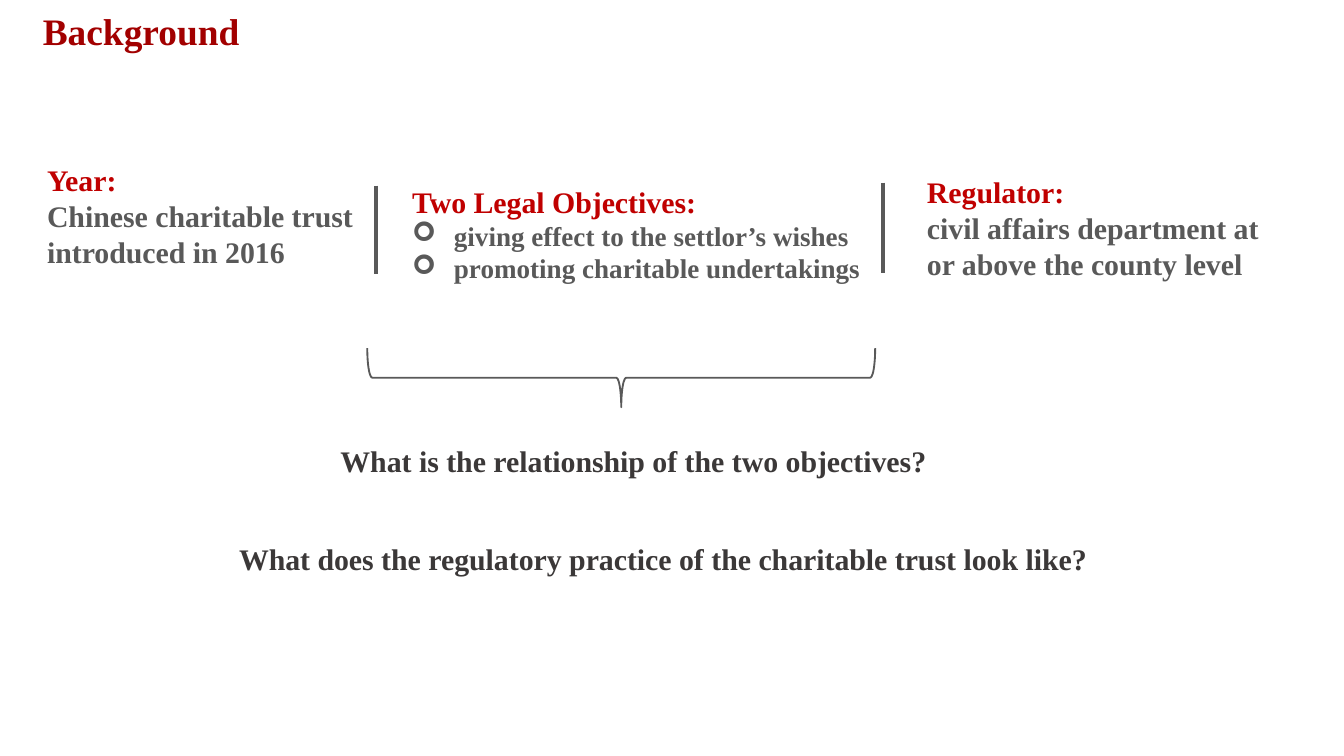
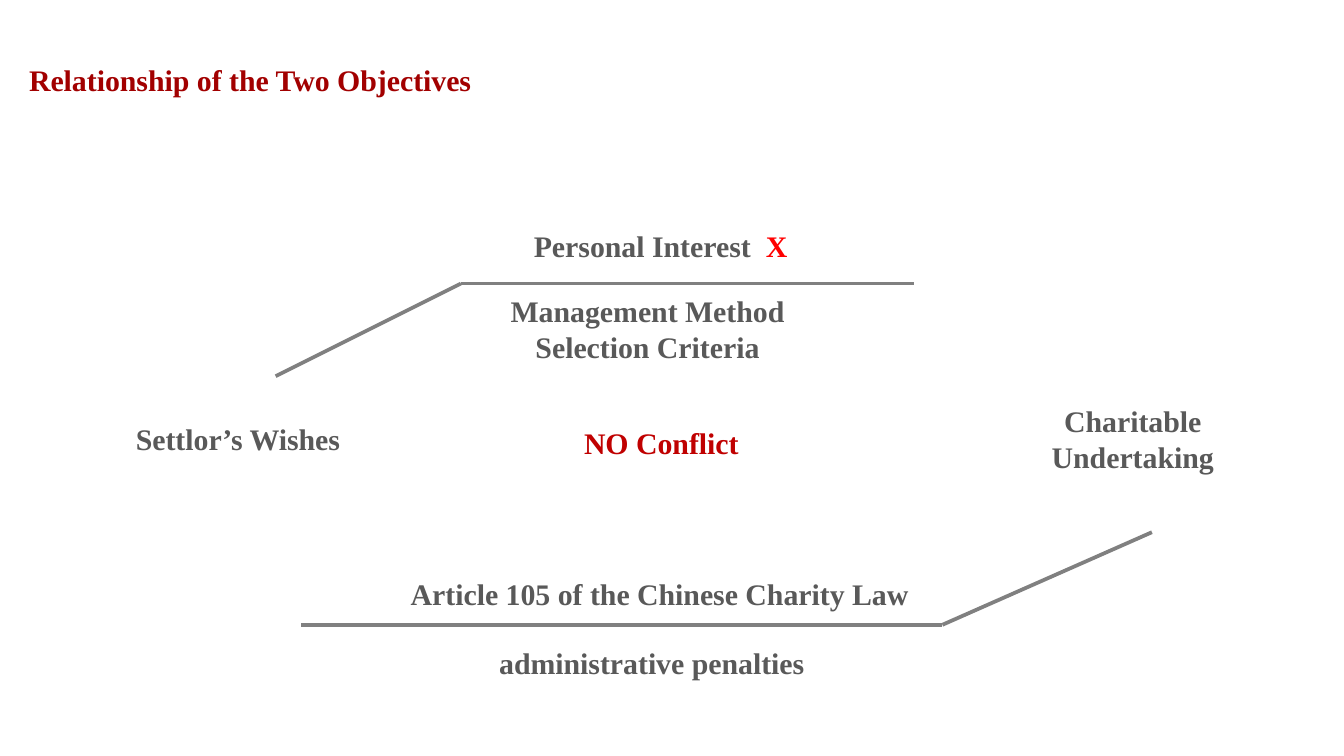
from lxml import etree
from pptx import Presentation
from pptx.dml.color import RGBColor
from pptx.enum.shapes import MSO_CONNECTOR, MSO_SHAPE
from pptx.enum.text import MSO_ANCHOR, MSO_AUTO_SIZE, PP_ALIGN
from pptx.oxml.ns import qn
from pptx.util import Cm, Pt

FONT = "Times New Roman"
TITLE, ACCENT, BODY, DARK = "A20000", "C00000", "595959", "3B3838"
RULE, CROSS = "808080", "FF0000"
BULLET = "➢"
INDENT = Cm(0.79)

# Content: boxes are (left, top, width, height) in cm
FACTS = [
    ((0.64, 2.92, 7.04, 2.31), "Year:",
     ["Chinese charitable trust introduced in 2016"], {}),
    ((7.54, 3.33, 9.3, 2.18), "Two Legal Objectives:",
     ["giving effect to the settlor’s wishes",
      "promoting charitable undertakings"], {"size": 14.5, "bullet": True}),
    ((17.27, 3.15, 7.04, 2.31), "Regulator:",
     ["civil affairs department at or above the county level"], {}),
]
DIVIDERS = [(7.11, 3.51, 5.18), (16.69, 3.45, 5.16)]  # x, top, bottom
BRACE = (11.18, 2.34, 1.12, 9.6)
QUESTIONS = [
    ((5.69, 8.23, 12.57, 0.94),
     "What is the relationship of the two objectives?"),
    ((4.14, 10.08, 16.79, 0.94),
     "What does the regulatory practice of the charitable trust look like?"),
]

SIDES = [
    ((1.7, 7.82, 5.74, 0.94), "Settlor’s Wishes ", BODY),
    ((18.59, 7.47, 5.64, 1.63), "Charitable Undertaking", BODY),
    ((9.53, 7.9, 5.94, 0.94), "NO Conflict", ACCENT),
]
LINE_LABELS = [
    ((9.73, 4.19, 5.51, 0.89), [[("Personal Interest  ", BODY), ("X", CROSS)]]),
    ((6.25, 5.77, 12.12, 0.89), ["Management Method ", "Selection Criteria "]),
    ((5.69, 10.77, 13.56, 0.89), ["Article 105 of the Chinese Charity Law"]),
    ((5.54, 12.07, 13.56, 0.89), ["administrative penalties"]),
]
# Each bent line: corner, then the two ends
BENT_LINES = [
    ((8.71, 5.36), [(17.27, 5.36), (5.21, 7.11)]),
    ((17.81, 11.81), [(5.69, 11.81), (21.77, 10.06)]),
]


def rgb(value):
    return RGBColor.from_string(value)


def add_box(s, box, grow=True):
    """Add an empty, vertically centred text box."""
    tf = s.shapes.add_textbox(*map(Cm, box)).text_frame
    tf.word_wrap = True
    tf.vertical_anchor = MSO_ANCHOR.MIDDLE
    if grow:
        tf.auto_size = MSO_AUTO_SIZE.SHAPE_TO_FIT_TEXT
    return tf


def add_text(tf, text, size=16, color=BODY, align=PP_ALIGN.LEFT,
             bullet=False, spacing=None):
    """Add a paragraph; text is a string or a list of (text, colour) runs."""
    p = tf.paragraphs[0]
    if p.runs:
        p = tf.add_paragraph()
    p.alignment = align
    if spacing:
        p.line_spacing = spacing
    if bullet:
        pPr = p._p.get_or_add_pPr()
        pPr.set("marL", str(INDENT))
        pPr.set("indent", str(-INDENT))
        etree.SubElement(pPr, qn("a:buFont")).set("typeface", "Wingdings")
        etree.SubElement(pPr, qn("a:buChar")).set("char", BULLET)
    runs = [(text, color)] if isinstance(text, str) else text
    for words, run_color in runs:
        r = p.add_run()
        r.text = words
        r.font.name = FONT
        r.font.size = Pt(size)
        r.font.bold = True
        r.font.color.rgb = rgb(run_color)


def add_line(s, start, end, color, width):
    line = s.shapes.add_connector(MSO_CONNECTOR.STRAIGHT,
                                  *map(Cm, (*start, *end)))
    line.line.color.rgb = rgb(color)
    line.line.width = Pt(width)
    etree.SubElement(line._element.spPr, qn("a:effectLst"))


def add_slide(prs, title, left, top, size):
    s = prs.slides.add_slide(prs.slide_layouts[6])
    tf = add_box(s, (left, top, 22.86, 2.39), grow=False)
    add_text(tf, title, size=size, color=TITLE, spacing=0.9)
    return s


def build_background(prs):
    s = add_slide(prs, "Background", 0.56, -0.56, 20)

    # Three facts with dividers between them
    for x, top, bottom in DIVIDERS:
        add_line(s, (x, top), (x, bottom), BODY, 2.25)
    for box, heading, lines, style in FACTS:
        tf = add_box(s, box)
        add_text(tf, heading, color=ACCENT)
        for text in lines:
            add_text(tf, text, **style)

    # Brace leading to the questions
    sp = s.shapes.add_shape(MSO_SHAPE.RIGHT_BRACE, *map(Cm, BRACE))
    sp.rotation = 90
    sp.shadow.inherit = False
    sp.fill.background()
    sp.line.color.rgb = rgb(BODY)
    sp.line.width = Pt(1)
    for box, text in QUESTIONS:
        add_text(add_box(s, box), text, color=DARK, align=PP_ALIGN.CENTER)


def build_relationship(prs):
    s = add_slide(prs, "Relationship of the Two Objectives", 0.3, 0.36, 16)

    # Two objectives and the conclusion between them
    for box, text, color in SIDES:
        add_text(add_box(s, box), text, color=color, align=PP_ALIGN.CENTER)

    # Bent lines with labels above and below
    for corner, ends in BENT_LINES:
        for end in ends:
            add_line(s, corner, end, RULE, 2)
    for box, lines in LINE_LABELS:
        tf = add_box(s, box, grow=False)
        tf.margin_top = tf.margin_bottom = 0
        for text in lines:
            add_text(tf, text, align=PP_ALIGN.CENTER)


def main():
    prs = Presentation()
    prs.slide_width, prs.slide_height = Cm(25.4), Cm(14.29)
    build_background(prs)
    build_relationship(prs)
    prs.save("out.pptx")


if __name__ == "__main__":
    main()
